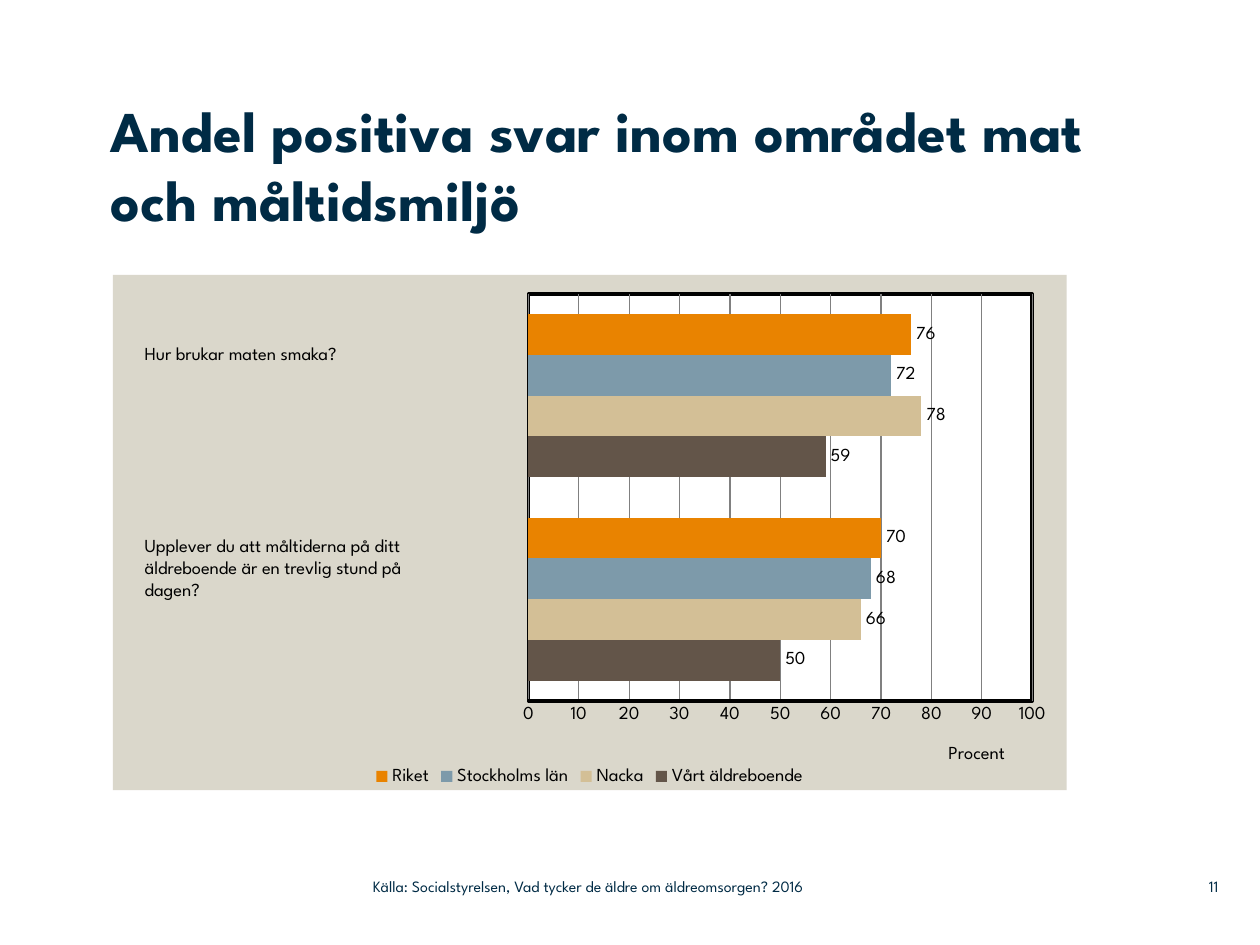
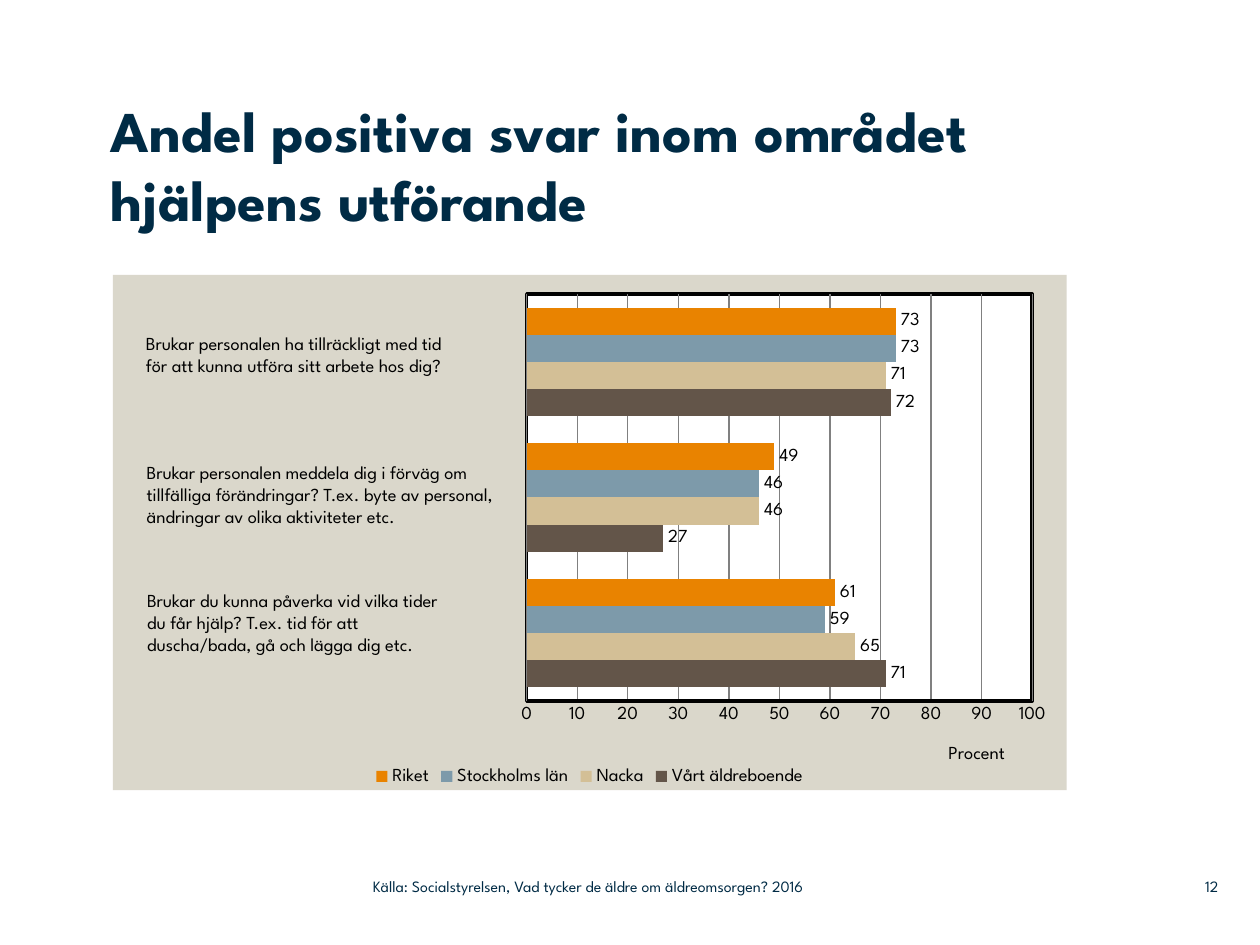
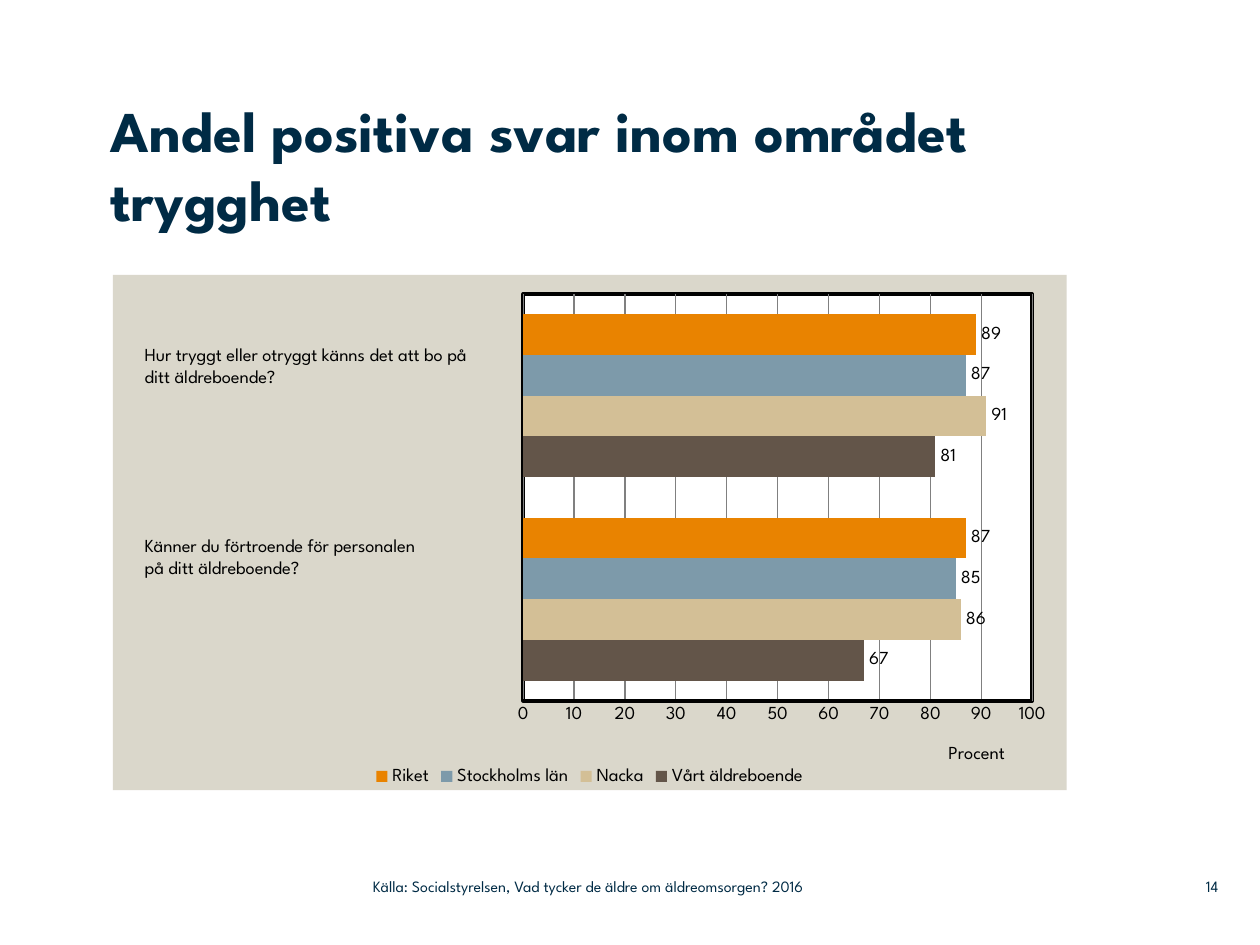
from dataclasses import dataclass

from lxml.etree import SubElement
from pptx import Presentation
from pptx.chart.chart import Chart
from pptx.chart.data import CategoryChartData
from pptx.dml.color import RGBColor
from pptx.enum.chart import XL_CHART_TYPE, XL_LABEL_POSITION, XL_LEGEND_POSITION, XL_TICK_MARK
from pptx.enum.text import MSO_ANCHOR, MSO_AUTO_SIZE, PP_ALIGN
from pptx.oxml import parse_xml
from pptx.oxml.ns import nsdecls, qn
from pptx.slide import Slide
from pptx.text.text import Font
from pptx.util import Pt

NAVY = RGBColor(0x00, 0x2B, 0x45)
BLACK = RGBColor(0x00, 0x00, 0x00)
WHITE = RGBColor(0xFF, 0xFF, 0xFF)
GRID_GREY = RGBColor(0x80, 0x80, 0x80)
PANEL = RGBColor(0xDA, 0xD7, 0xCB)
SERIES_COLOURS = {
    "Vårt äldreboende": RGBColor(0x63, 0x55, 0x49),
    "Nacka": RGBColor(0xD3, 0xBF, 0x96),
    "Stockholms län": RGBColor(0x7D, 0x9A, 0xAA),
    "Riket": RGBColor(0xE9, 0x83, 0x00),
}
FONT = "League Spartan"
SOURCE = "Källa: Socialstyrelsen, Vad tycker de äldre om äldreomsorgen? 2016"
TITLE_FORMAT = {"name": FONT, "size": Pt(33), "bold": True}
BODY_FORMAT = {"name": FONT, "size": Pt(10.5), "bold": False}
FOOTER_FORMAT = {"name": FONT, "size": Pt(9), "bold": False}
NO_INSETS = {"margin_left": 0, "margin_top": 0, "margin_right": 0, "margin_bottom": 0}
FOOTER_FRAME = {**NO_INSETS, "vertical_anchor": MSO_ANCHOR.MIDDLE}
GROWING_FRAME = {"auto_size": MSO_AUTO_SIZE.SHAPE_TO_FIT_TEXT}


@dataclass(frozen=True)
class Box:
    """A rectangle in points."""

    left: float
    top: float
    width: float
    height: float

    def lengths(self) -> tuple[Pt, Pt, Pt, Pt]:
        """Give the four lengths in slide units."""
        return Pt(self.left), Pt(self.top), Pt(self.width), Pt(self.height)


@dataclass(frozen=True)
class Question:
    """A survey question beside its group of bars."""

    lines: tuple[str, ...]
    box: Box


@dataclass(frozen=True)
class ResultSlide:
    """One survey area with its questions and shares by series."""

    number: int
    title: str
    title_width: float
    plot_left: float
    questions: tuple[Question, ...]
    shares: tuple[tuple[int, ...], ...]


CHART_BOX = Box(64.5, 157, 545, 294.5)
SOURCE_BOX = Box(213.1, 496.1, 319, 20.9)
NUMBER_BOX = Box(662.4, 496.1, 33.8, 20.9)
PLOT_RIGHT, PLOT_TOP, PLOT_HEIGHT = 525.4, 11, 232.6
AXIS_TITLE_LEFT, AXIS_TITLE_TOP = 475.6, 266.6

SLIDES = (
    ResultSlide(
        11, "Andel positiva svar inom området mat och måltidsmiljö", 606.2, 237.5,
        (
            Question(("Hur brukar maten smaka?",), Box(75.6, 192.2, 213.8, 20.2)),
            Question(
                ("Upplever du att måltiderna på ditt äldreboende är en trevlig stund på", "dagen?"),
                Box(75.6, 301.7, 211, 45.4),
            ),
        ),
        ((50, 59), (66, 78), (68, 72), (70, 76)),
    ),
    ResultSlide(
        12, "Andel positiva svar inom området hjälpens utförande", 547.2, 236.5,
        (
            Question(
                ("Brukar personalen ha tillräckligt med tid", "för att kunna utföra sitt arbete hos dig?"),
                Box(76.3, 186.5, 215.3, 32.4),
            ),
            Question(
                ("Brukar personalen meddela dig i förväg om tillfälliga förändringar? "
                 "T.ex. byte av personal, ändringar av olika aktiviteter etc.",),
                Box(76.8, 259.9, 213.8, 58.3),
            ),
            Question(
                ("Brukar du kunna påverka vid vilka tider", "du får hjälp? T.ex. tid för att",
                 "duscha/bada, gå och lägga dig etc."),
                Box(77, 333, 213.8, 45.4),
            ),
        ),
        ((71, 27, 72), (65, 46, 71), (59, 46, 73), (61, 49, 73)),
    ),
    ResultSlide(
        14, "Andel positiva svar inom området trygghet", 547.2, 234.5,
        (
            Question(
                ("Hur tryggt eller otryggt känns det att bo på ditt äldreboende?",),
                Box(75.6, 192.7, 211.7, 32.4),
            ),
            Question(
                ("Känner du förtroende för personalen", "på ditt äldreboende?"),
                Box(75.6, 301.7, 211, 32.4),
            ),
        ),
        ((67, 81), (86, 91), (85, 87), (87, 89)),
    ),
)


def set_font(font: Font, values: dict, colour: RGBColor) -> None:
    """Apply format values and a colour to a font."""
    for name, value in values.items():
        setattr(font, name, value)
    font.color.rgb = colour


def add_text(s: Slide, box: Box, lines: tuple[str, ...], values: dict, colour: RGBColor,
             frame: dict, align: PP_ALIGN = PP_ALIGN.LEFT) -> None:
    """Add a wrapped text box with one paragraph per line."""
    tf = s.shapes.add_textbox(*box.lengths()).text_frame
    tf.word_wrap = True
    for name, value in frame.items():
        setattr(tf, name, value)
    for i, line in enumerate(lines):
        p = tf.add_paragraph() if i else tf.paragraphs[0]
        p.alignment = align
        r = p.add_run()
        r.text = line
        set_font(r.font, values, colour)


def set_layout(parent, index: int, **values: str | float) -> None:
    """Place a chart part by a manual layout, with lengths in points."""
    for old in parent.findall(qn("c:layout")):
        parent.remove(old)
    layout = parse_xml(f"<c:layout {nsdecls('c')}/>")
    manual = SubElement(layout, qn("c:manualLayout"))
    spans = {"x": CHART_BOX.width, "y": CHART_BOX.height, "w": CHART_BOX.width, "h": CHART_BOX.height}
    for name, value in values.items():
        share = value / spans[name] if name in spans else value
        SubElement(manual, qn(f"c:{name}")).set("val", str(share))
    parent.insert(index, layout)


def area_format(fill: RGBColor, line: str):
    """Build the fill and outline of a chart area."""
    return parse_xml(
        f"<c:spPr {nsdecls('c', 'a')}><a:solidFill><a:srgbClr val='{fill}'/></a:solidFill>{line}</c:spPr>"
    )


def format_axes(chart: Chart) -> None:
    """Format the percentage axis and hide the category axis."""
    chart.category_axis.visible = False
    axis = chart.value_axis
    settings = {"minimum_scale": 0, "maximum_scale": 100, "major_unit": 10,
                "major_tick_mark": XL_TICK_MARK.NONE, "minor_tick_mark": XL_TICK_MARK.NONE,
                "has_major_gridlines": True}
    for name, value in settings.items():
        setattr(axis, name, value)
    lines = ((axis.format.line, BLACK, 2), (axis.major_gridlines.format.line, GRID_GREY, 0.75))
    for line, colour, width in lines:
        line.color.rgb = colour
        line.width = Pt(width)
    set_font(axis.tick_labels.font, BODY_FORMAT, BLACK)
    r = axis.axis_title.text_frame.paragraphs[0].add_run()
    r.text = "Procent"
    set_font(r.font, BODY_FORMAT, BLACK)
    title = axis.axis_title._element
    set_layout(title, 1, xMode="edge", yMode="edge", x=AXIS_TITLE_LEFT, y=AXIS_TITLE_TOP)


def add_result_chart(s: Slide, result: ResultSlide) -> None:
    """Add the bar chart of shares for each question."""
    data = CategoryChartData()
    data.categories = [str(i + 1) for i in range(len(result.questions))]
    for name, values in zip(SERIES_COLOURS, result.shares):
        data.add_series(name, values)
    chart = s.shapes.add_chart(XL_CHART_TYPE.BAR_CLUSTERED, *CHART_BOX.lengths(), data).chart
    chart.has_title = False
    set_font(chart.font, BODY_FORMAT, BLACK)
    chart.has_legend = True
    chart.legend.position = XL_LEGEND_POSITION.BOTTOM
    chart.legend.include_in_layout = False
    set_font(chart.legend.font, BODY_FORMAT, BLACK)

    plot = chart.plots[0]
    plot.gap_width = 100
    plot.vary_by_categories = False
    for series, colour in zip(plot.series, SERIES_COLOURS.values()):
        series.format.fill.solid()
        series.format.fill.fore_color.rgb = colour
        labels = series.data_labels
        labels.show_value = True
        labels.position = XL_LABEL_POSITION.OUTSIDE_END
        set_font(labels.font, BODY_FORMAT, BLACK)

    format_axes(chart)
    space = chart._chartSpace
    area = space.chart.plotArea
    set_layout(area, 0, layoutTarget="inner", xMode="edge", yMode="edge", x=result.plot_left,
               y=PLOT_TOP, w=PLOT_RIGHT - result.plot_left, h=PLOT_HEIGHT)
    border = f"<a:ln w='{Pt(2)}'><a:solidFill><a:srgbClr val='{BLACK}'/></a:solidFill></a:ln>"
    area.append(area_format(WHITE, border))
    space.chart.addnext(area_format(PANEL, "<a:ln><a:noFill/></a:ln>"))


def add_result_slide(prs: Presentation, result: ResultSlide) -> None:
    """Add a slide with title, chart, questions and footer."""
    s = prs.slides.add_slide(prs.slide_layouts[6])
    add_result_chart(s, result)
    title_box = Box(63.4, 54, result.title_width, 102.2)
    add_text(s, title_box, (result.title,), TITLE_FORMAT, NAVY, NO_INSETS)
    for question in result.questions:
        add_text(s, question.box, question.lines, BODY_FORMAT, BLACK, GROWING_FRAME)
    add_text(s, NUMBER_BOX, (str(result.number),), FOOTER_FORMAT, NAVY, FOOTER_FRAME, PP_ALIGN.RIGHT)
    add_text(s, SOURCE_BOX, (SOURCE,), FOOTER_FORMAT, NAVY, FOOTER_FRAME)


def main() -> None:
    """Build and save the presentation."""
    prs = Presentation()
    prs.slide_width, prs.slide_height = Pt(720), Pt(540)
    for result in SLIDES:
        add_result_slide(prs, result)
    prs.save("out.pptx")


if __name__ == "__main__":
    main()
